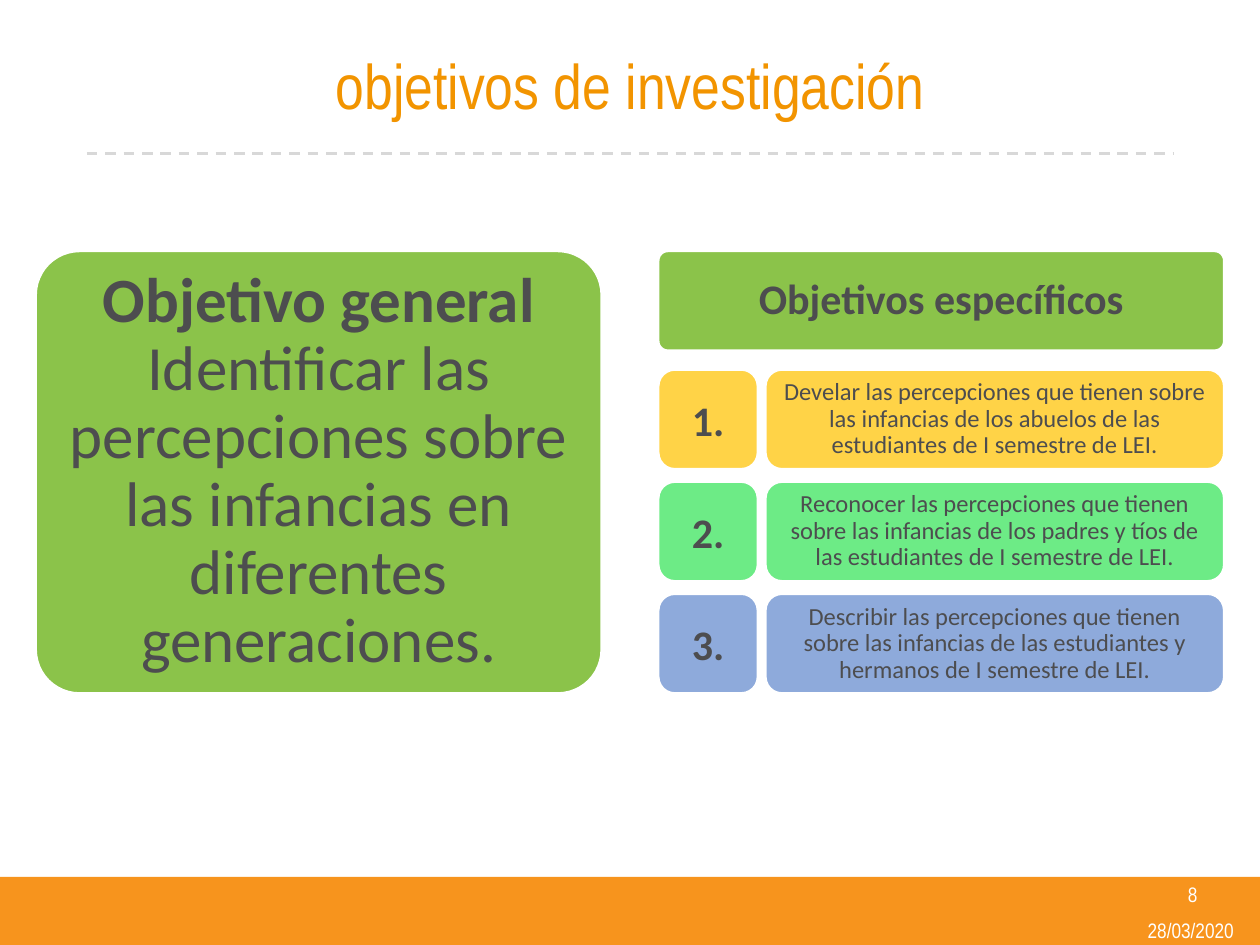
from dataclasses import dataclass

from lxml import etree
from pptx import Presentation, util as u
from pptx.dml.color import RGBColor
from pptx.enum import dml, shapes, text
from pptx.oxml.ns import qn


@dataclass(frozen=True)
class Theme:
    orange: str = "F7941D"
    title_orange: str = "F29400"
    green: str = "8BC34A"
    rows: tuple = ("FFD347", "6DEB86", "8EAADB")
    ink: str = "4D4D4F"
    white: str = "FFFFFF"
    rule: str = "D8D8D8"
    heading_font: str = "Arial Narrow"
    body_font: str = "Calibri"
    large: int = 36
    medium: int = 24
    small: int = 14
    footer: int = 12


theme = Theme()


def write(shape, runs, size, font, color, inset=(0.25, 0.13), spacing=1.0):
    """Fill a shape with one centred paragraph of (wording, bold) runs."""
    frame = shape.text_frame
    side, edge = (u.Cm(length) for length in inset)
    frame_format = {
        "word_wrap": True,
        "vertical_anchor": text.MSO_ANCHOR.MIDDLE,
        "margin_left": side,
        "margin_right": side,
        "margin_top": edge,
        "margin_bottom": edge,
    }
    for name, value in frame_format.items():
        setattr(frame, name, value)
    paragraph = frame.paragraphs[0]
    paragraph.alignment = text.PP_ALIGN.CENTER
    paragraph.line_spacing = spacing
    paragraph.space_before = u.Pt(0)
    for wording, bold in runs:
        run = paragraph.add_run()
        run.text = wording
        run_format = {"name": font, "size": u.Pt(size), "bold": bold}
        for name, value in run_format.items():
            setattr(run.font, name, value)
        run.font.color.rgb = RGBColor.from_string(color)


def add_card(left, top, width, height, fill, corner):
    """Add a rounded rectangle with a white outline."""
    card = slide.shapes.add_shape(
        shapes.MSO_SHAPE.ROUNDED_RECTANGLE,
        u.Cm(left), u.Cm(top), u.Cm(width), u.Cm(height))
    card.adjustments[0] = corner
    card.shadow.inherit = False
    card.fill.solid()
    card.fill.fore_color.rgb = RGBColor.from_string(fill)
    card.line.color.rgb = RGBColor.from_string(theme.white)
    card.line.width = u.Pt(2)
    return card


presentation = Presentation()
presentation.slide_width = u.Cm(25.4)
presentation.slide_height = u.Cm(19.05)
slide = presentation.slides.add_slide(presentation.slide_layouts[5])

# Footer band with page number and date
band = slide.shapes.add_shape(
    shapes.MSO_SHAPE.RECTANGLE, 0, u.Cm(17.68), presentation.slide_width, u.Cm(1.37))
band.shadow.inherit = False
band.fill.solid()
band.fill.fore_color.rgb = RGBColor.from_string(theme.orange)
band.line.fill.background()

footer_items = [
    ("28/03/2020", 22.66, 18.49, 2.69, 0.53),
    ("8", 22.71, 17.65, 2.67, 0.76),
]
for wording, *place in footer_items:
    box = slide.shapes.add_textbox(*(u.Cm(length) for length in place))
    write(box, [(wording, False)], theme.footer, theme.heading_font, theme.white)

# Title and dashed rule
title = slide.shapes.title
title_place = {"left": 1.75, "top": 0.33, "width": 21.9, "height": 2.74}
for name, length in title_place.items():
    setattr(title, name, u.Cm(length))
write(title, [("objetivos de investigación", False)],
      theme.large, theme.heading_font, theme.title_orange)

rule = slide.shapes.add_connector(
    shapes.MSO_CONNECTOR.STRAIGHT, u.Cm(1.75), u.Cm(3.1), u.Cm(23.65), u.Cm(3.1))
rule.line.color.rgb = RGBColor.from_string(theme.rule)
rule.line.width = u.Pt(1.5)
rule.line.dash_style = dml.MSO_LINE.DASH
etree.SubElement(rule._element.spPr, qn("a:effectLst"))

# General objective on the left, heading of the specific ones on the right
cards_top, column_width = 5.05, 11.43
right_column = 13.26
heading_inset = (0.08, 0.05)

general = add_card(0.71, cards_top, column_width, 8.94, theme.green, 0.1)
write(general,
      [("Objetivo general ", True),
       ("Identificar las percepciones sobre las infancias en diferentes generaciones.", False)],
      theme.large, theme.body_font, theme.ink, heading_inset, 0.9)

row_height, row_pitch, first_row = 2.03, 2.26, 7.44
heading = add_card(right_column, cards_top, column_width, row_height, theme.green, 0.1)
write(heading, [("Objetivos específicos", True)],
      theme.medium, theme.body_font, theme.ink, heading_inset, 0.9)

# Numbered specific objectives
objectives = [
    "Develar las percepciones que tienen sobre las infancias de los abuelos "
    "de las estudiantes de I semestre de LEI.",
    "Reconocer las percepciones que tienen sobre las infancias de los padres y tíos "
    "de las estudiantes de I semestre de LEI.",
    "Describir las percepciones que tienen sobre las infancias de las estudiantes "
    "y hermanos de I semestre de LEI.",
]
objective_left = 15.42
objective_width = right_column + column_width - objective_left
for index, (objective, color) in enumerate(zip(objectives, theme.rows)):
    top = first_row + index * row_pitch
    number = add_card(right_column, top, row_height, row_height, color, 0.17)
    write(number, [(f"{index + 1}.", True)], theme.medium, theme.body_font, theme.ink)
    card = add_card(objective_left, top, objective_width, row_height, color, 0.17)
    write(card, [(objective, False)], theme.small, theme.body_font, theme.ink,
          (0.23, 0.23), 0.9)

presentation.save("out.pptx")
